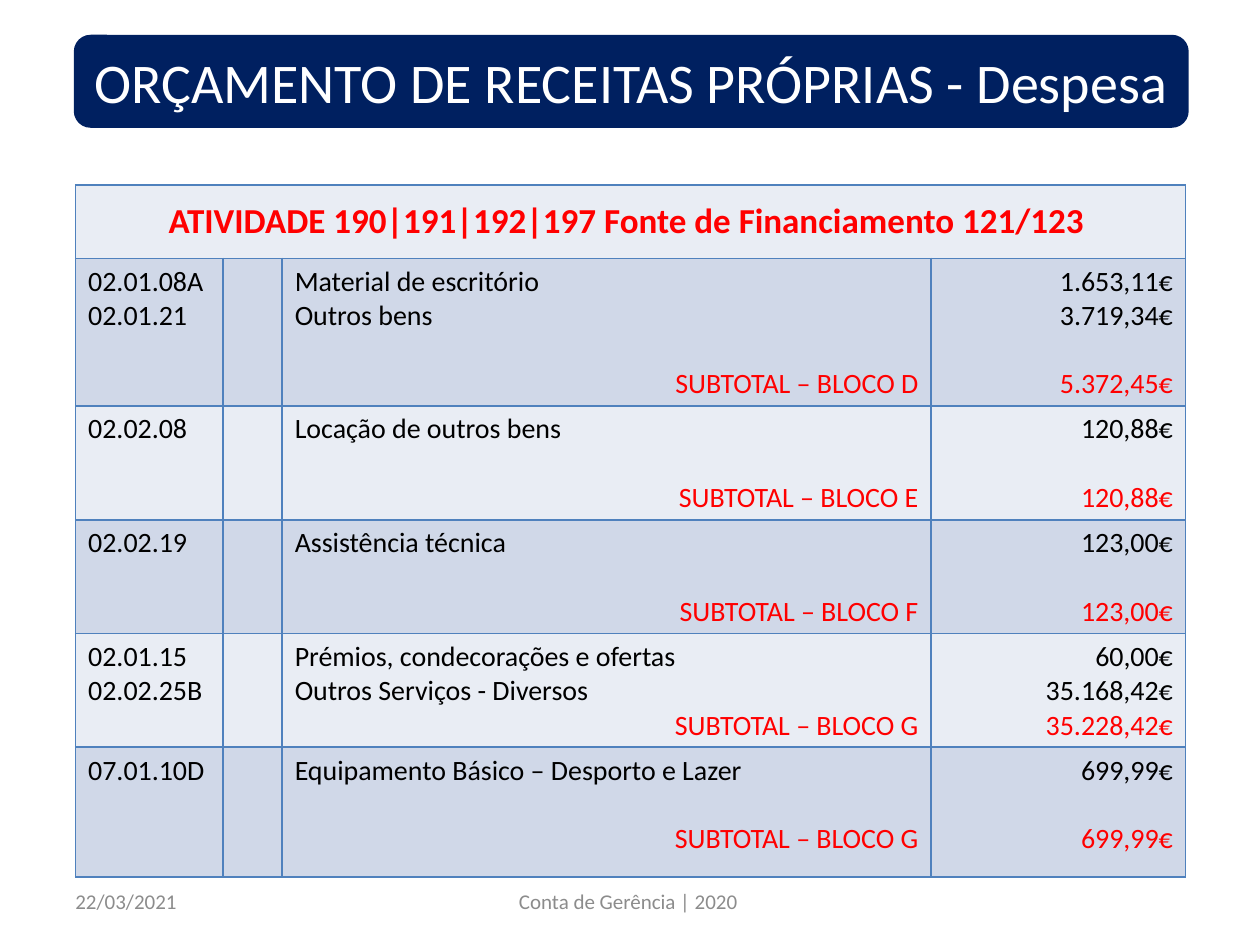
from pptx import Presentation, util as u
from pptx.dml.color import RGBColor
from pptx.enum import shapes, text
from pptx.oxml import parse_xml
from pptx.oxml.ns import nsdecls

# Content: each block is (entries, subtotal label, subtotal, gap lines, row height)
TITLE = "ORÇAMENTO DE RECEITAS PRÓPRIAS - Despesa"
HEADING = "ATIVIDADE 190|191|192|197 Fonte de Financiamento 121/123 "
BLOCKS = [
    ([("02.01.08A", "Material de escritório", "1.653,11€"),
      ("02.01.21", "Outros bens", "3.719,34€")],
     "SUBTOTAL – BLOCO D", "5.372,45€", 1, 1.13),
    ([("02.02.08", "Locação de outros bens", "120,88€")],
     "SUBTOTAL – BLOCO E", "120,88€", 1, 0.87),
    ([("02.02.19", "Assistência técnica", "123,00€")],
     "SUBTOTAL – BLOCO F", "123,00€", 1, 0.87),
    ([("02.01.15", "Prémios, condecorações e ofertas", "60,00€"),
      ("02.02.25B", "Outros Serviços - Diversos", "35.168,42€")],
     "SUBTOTAL – BLOCO G", "35.228,42€", 0, 0.87),
    ([("07.01.10D", "Equipamento Básico – Desporto e Lazer", "699,99€")],
     "SUBTOTAL – BLOCO G", "699,99€", 1, 1.03),
]
LEFT, CENTER, RIGHT = text.PP_ALIGN.LEFT, text.PP_ALIGN.CENTER, text.PP_ALIGN.RIGHT
FOOTERS = [("22/03/2021", 0.5, 2.33, LEFT),
           ("Conta de Gerência | 2020 ", 3.42, 3.17, CENTER)]
COLUMNS = [1.17, 0.47, 5.15, 2.02]
HEADING_HEIGHT = 0.58
THEME = {
    "font": "Calibri", "banner": "002060", "white": "FFFFFF", "body": "000000",
    "accent": "FF0000", "muted": "8C8C8C", "border": "4F81BD",
    "bands": ["E9EDF4", "D0D8E8"],
    "title_pt": 32, "heading_pt": 20, "body_pt": 16, "footer_pt": 12, "line_pt": 19.5,
}


def rgb(name):
    return RGBColor.from_string(THEME[name])


def write(frame, lines, size):
    """Write lines given as (text, colour, alignment, bold, gap lines before)."""
    for index, (words, colour, align, bold, gap) in enumerate(lines):
        para = frame.paragraphs[0] if index == 0 else frame.add_paragraph()
        para.alignment = align
        if gap:
            para.space_before = u.Pt(gap * THEME["line_pt"])
        run = para.add_run()
        run.text = words
        run.font.name, run.font.size = THEME["font"], u.Pt(THEME[size])
        run.font.bold, run.font.color.rgb = bold, rgb(colour)


def style_cell(cell, band):
    cell.fill.solid()
    cell.fill.fore_color.rgb = RGBColor.from_string(THEME["bands"][band % 2])
    for index, side in enumerate(("lnL", "lnR", "lnT", "lnB")):
        cell._tc.get_or_add_tcPr().insert(index, parse_xml(
            f'<a:{side} {nsdecls("a")} w="12700"><a:solidFill>'
            f'<a:srgbClr val="{THEME["border"]}"/></a:solidFill></a:{side}>'))


prs = Presentation()
prs.slide_width, prs.slide_height = u.Inches(10), u.Inches(7.5)
slide = prs.slides.add_slide(prs.slide_layouts[6])

# Footer
for words, left, width, align in FOOTERS:
    footer = slide.shapes.add_textbox(
        u.Inches(left), u.Inches(6.95), u.Inches(width), u.Inches(0.4)).text_frame
    footer.word_wrap = True
    footer.vertical_anchor = text.MSO_ANCHOR.MIDDLE
    write(footer, [(words, "muted", align, False, 0)], "footer_pt")

# Title banner
banner = slide.shapes.add_shape(
    shapes.MSO_SHAPE.ROUNDED_RECTANGLE,
    u.Inches(0.6), u.Inches(0.29), u.Inches(8.82), u.Inches(0.71))
banner.shadow.inherit = False
banner.fill.solid()
banner.fill.fore_color.rgb = banner.line.color.rgb = rgb("banner")
banner.line.width = u.Pt(2)
banner.text_frame.word_wrap = True
banner.text_frame.vertical_anchor = text.MSO_ANCHOR.MIDDLE
write(banner.text_frame, [(TITLE, "white", CENTER, False, 0)], "title_pt")

# Expense table
heights = [HEADING_HEIGHT] + [block[-1] for block in BLOCKS]
expenses = slide.shapes.add_table(
    len(heights), len(COLUMNS), u.Inches(0.6), u.Inches(1.47),
    u.Inches(sum(COLUMNS)), u.Inches(sum(heights))).table
for column, width in zip(expenses.columns, COLUMNS):
    column.width = u.Inches(width)
for band, (row, height) in enumerate(zip(expenses.rows, heights)):
    row.height = u.Inches(height)
    for cell in row.cells:
        style_cell(cell, band)

# Heading row
heading = expenses.cell(0, 0)
heading.merge(expenses.cell(0, len(COLUMNS) - 1))
heading.vertical_anchor = text.MSO_ANCHOR.MIDDLE
write(heading.text_frame, [(HEADING, "accent", CENTER, True, 0)], "heading_pt")

# Block rows: codes, descriptions and amounts, each closed by its subtotal
for row, (entries, label, subtotal, gap, _) in enumerate(BLOCKS, 1):
    codes, descriptions, amounts = zip(*entries)
    for column, values, align, closing in ((0, codes, LEFT, None),
                                           (2, descriptions, LEFT, label),
                                           (3, amounts, RIGHT, subtotal)):
        lines = [(value, "body", align, False, 0) for value in values]
        if closing:
            lines.append((closing, "accent", RIGHT, False, gap))
        write(expenses.cell(row, column).text_frame, lines, "body_pt")

prs.save("out.pptx")
